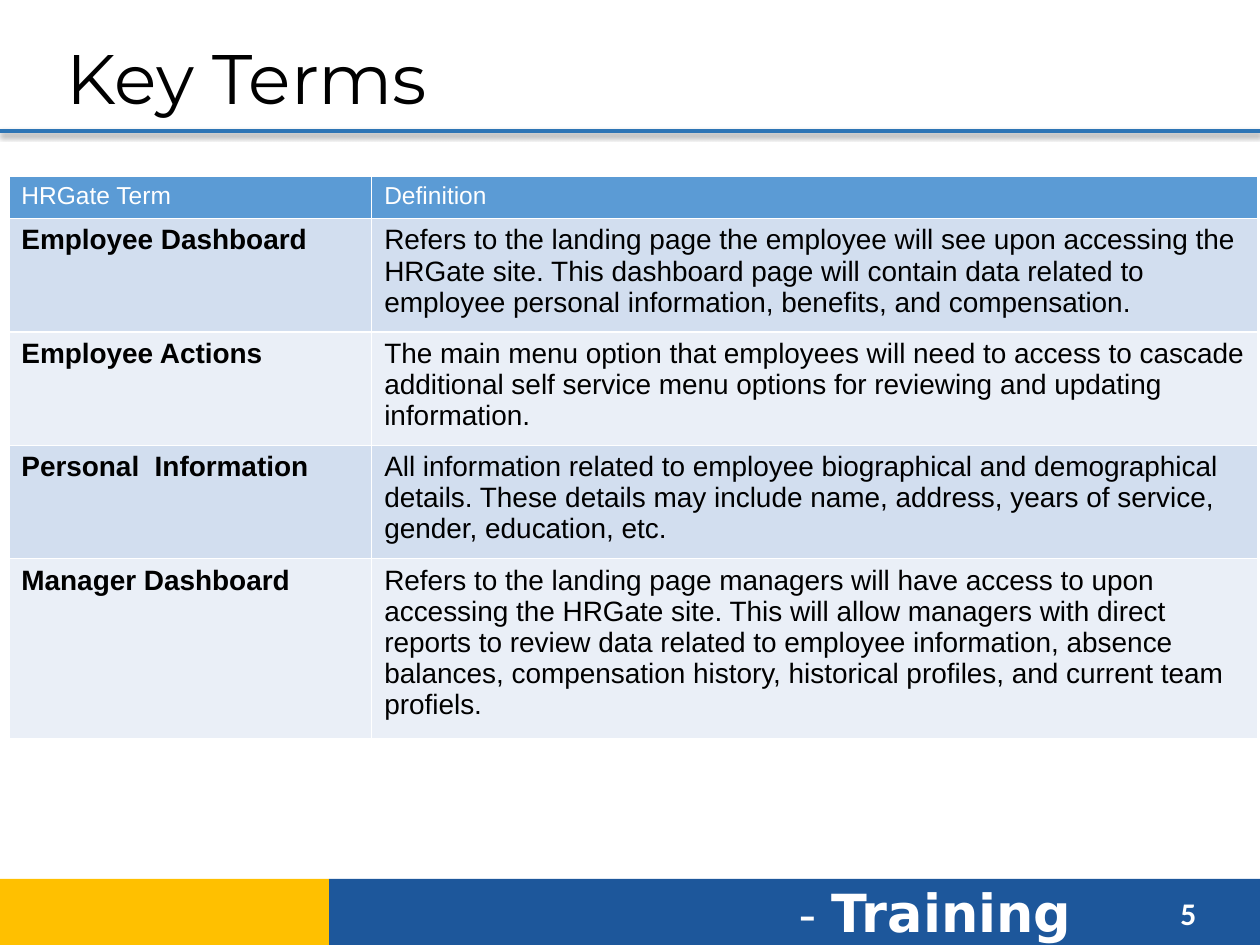
from lxml.etree import SubElement
from pptx import Presentation
from pptx.dml.color import RGBColor
from pptx.enum.shapes import MSO_CONNECTOR, MSO_SHAPE
from pptx.enum.text import MSO_ANCHOR, MSO_AUTO_SIZE, PP_ALIGN
from pptx.oxml import parse_xml
from pptx.oxml.ns import nsdecls, qn
from pptx.util import Inches, Pt

COLORS = {"blue": "1D579B", "gold": "FFC000", "rule": "2E75B5", "white": "FFFFFF",
          "black": "000000", "header": "5B9BD5", "band": "D2DEEF", "light": "EAEFF7"}
rgb = {name: RGBColor.from_string(value) for name, value in COLORS.items()}


def add_run(p, text, color, **fmt):
    r = p.add_run()
    r.text = text
    r.font.color.rgb = rgb[color]
    for key, value in fmt.items():
        setattr(r.font, key, value)


prs = Presentation()
prs.slide_width, prs.slide_height = Inches(10), Inches(7.5)
W, H = prs.slide_width, prs.slide_height
s = prs.slides.add_slide(prs.slide_layouts[5])

for left, width, color in [(0.261, 0.739, "blue"), (-0.001, 0.262, "gold")]:
    sp = s.shapes.add_shape(MSO_SHAPE.RECTANGLE, int(W * left), int(H * 0.93),
                            int(W * width), int(H * 0.07))
    sp.shadow.inherit = False
    sp.fill.solid()
    sp.fill.fore_color.rgb = rgb[color]
    sp.line.fill.background()

footer = [
    (0.624, 0.925, 0.28, 0.08, [("- ", {"size": Pt(28), "name": "DejaVu Sans"}),
                                ("Training", {"size": Pt(30), "name": "DejaVu Sans", "bold": True})]),
    (0.927, 0.939, 0.06, 0.053, [("5", {"size": Pt(18), "name": "Calibri", "bold": True})]),
]
for left, top, width, height, runs in footer:
    tf = s.shapes.add_textbox(int(W * left), int(H * top), int(W * width), int(H * height)).text_frame
    tf.word_wrap = True
    for text, fmt in runs:
        add_run(tf.paragraphs[0], text, "white", **fmt)

rule = s.shapes.add_connector(MSO_CONNECTOR.STRAIGHT, 0, Inches(1.04), W, Inches(1.04))
rule.line.color.rgb = rgb["rule"]
rule.line.width = Pt(2.25)
rule._element.spPr.append(parse_xml(
    f'<a:effectLst {nsdecls("a")}><a:outerShdw blurRad="{Pt(3.1)}" dist="{Pt(1.6)}" dir="5400000">'
    f'<a:srgbClr val="{COLORS["black"]}"><a:alpha val="38000"/></a:srgbClr></a:outerShdw></a:effectLst>'))

title = s.shapes.title
for key, value in {"left": 0.43, "top": 0.14, "width": 9.57, "height": 0.93}.items():
    setattr(title, key, Inches(value))
tf = title.text_frame
for key, value in {"vertical_anchor": MSO_ANCHOR.MIDDLE, "word_wrap": True,
                   "auto_size": MSO_AUTO_SIZE.NONE}.items():
    setattr(tf, key, value)
tf.paragraphs[0].alignment = PP_ALIGN.LEFT
add_run(tf.paragraphs[0], "Key Terms", "black", size=Pt(40), name="Montserrat")

rows = [
    ("HRGate Term", "Definition"),
    ("Employee Dashboard",
     "Refers to the landing page the employee will see upon accessing the HRGate site. This dashboard "
     "page will contain data related to employee personal information, benefits, and compensation."),
    ("Employee Actions",
     "The main menu option that employees will need to access to cascade additional self service menu "
     "options for reviewing and updating information."),
    ("Personal  Information",
     "All information related to employee biographical and demographical details. These details may "
     "include name, address, years of service, gender, education, etc."),
    ("Manager Dashboard",
     "Refers to the landing page managers will have access to upon accessing the HRGate site. This will "
     "allow managers with direct reports to review data related to employee information, absence "
     "balances, compensation history, historical profiles, and current team profiels."),
]
col_widths = [2.88, 7.03]
row_heights = [0.31, 0.84, 0.84, 0.84, 1.33]
table = s.shapes.add_table(len(rows), len(col_widths), Inches(0.07), Inches(1.4),
                           Inches(sum(col_widths)), Inches(sum(row_heights))).table
for col, width in zip(table.columns, col_widths):
    col.width = Inches(width)
for i, (row, height) in enumerate(zip(rows, row_heights)):
    table.rows[i].height = Inches(height)
    fill = "header" if i == 0 else ("light", "band")[i % 2]
    for j, text in enumerate(row):
        cell = table.cell(i, j)
        tcPr = cell._tc.get_or_add_tcPr()
        for side in ("lnL", "lnR", "lnT", "lnB"):
            ln = SubElement(tcPr, qn(f"a:{side}"), w=str(Pt(1)))
            SubElement(SubElement(ln, qn("a:solidFill")), qn("a:srgbClr"), val=COLORS["white"])
        cell.fill.solid()
        cell.fill.fore_color.rgb = rgb[fill]
        add_run(cell.text_frame.paragraphs[0], text, "black" if i else "white",
                size=Pt(16 if i else 14), name="Arial", bold=i > 0 and j == 0)

prs.save("out.pptx")
